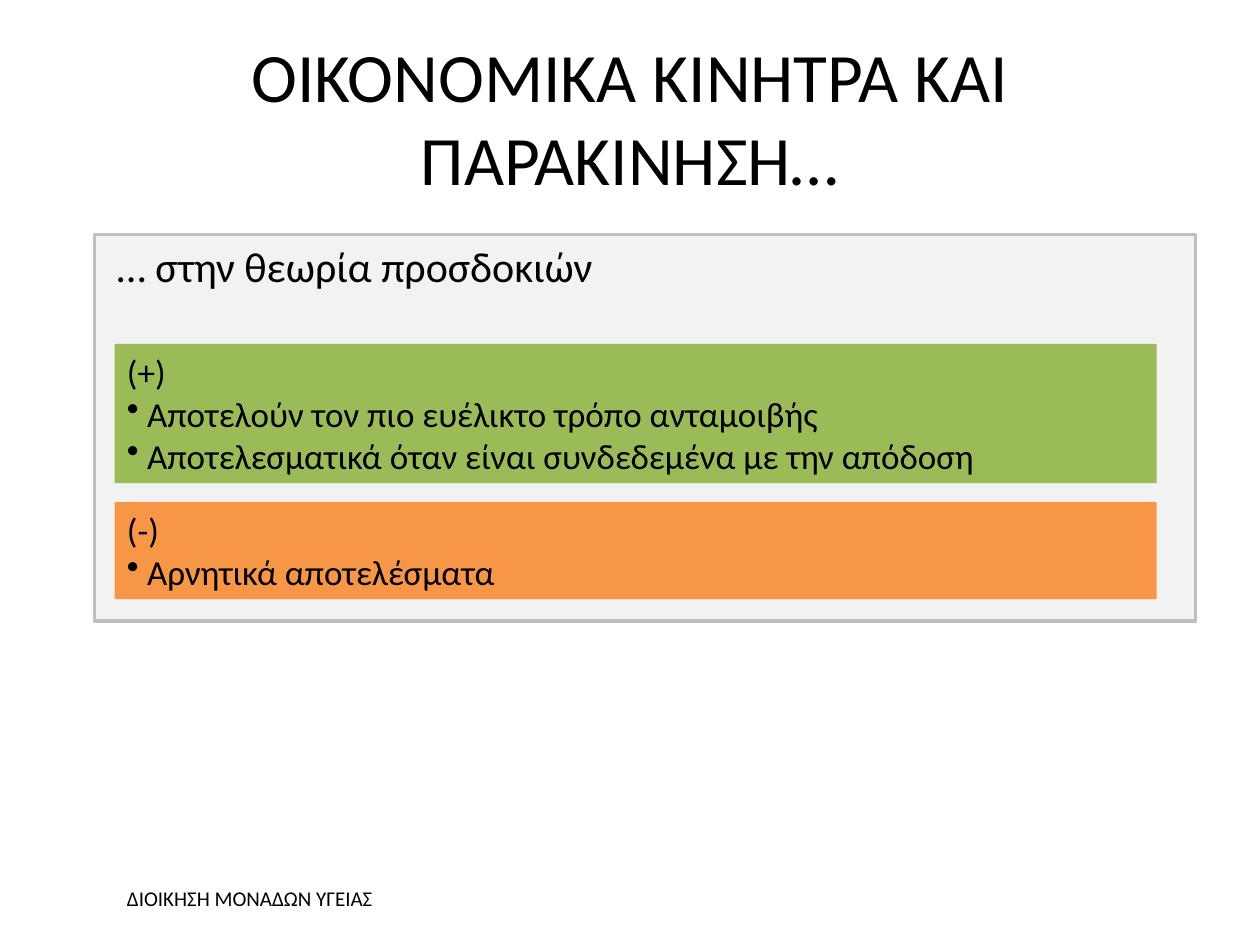
import pptx
import pptx.util
import pptx.dml.color
import pptx.enum.shapes
import pptx.enum.text
import pptx.oxml.ns
from dataclasses import dataclass
from lxml import etree

Inches = pptx.util.Inches
Pt = pptx.util.Pt
Align = pptx.enum.text.PP_ALIGN
Anchor = pptx.enum.text.MSO_ANCHOR


@dataclass(frozen=True)
class Theme:
    font: str = "Calibri"
    ink: str = "000000"
    panel: str = "F2F2F2"
    edge: str = "BFBFBF"
    plus: str = "9BBB59"
    minus: str = "F79646"
    title: float = 39.6
    lead: float = 24
    body: float = 20
    foot: float = 12


THEME = Theme()


def color(code):
    return pptx.dml.color.RGBColor.from_string(code)


def bullet(para):
    """Hang the paragraph behind a round bullet."""
    props = para._p.get_or_add_pPr()
    indent = Inches(0.16)
    props.set("marL", str(indent))
    props.set("indent", str(-indent))
    mark = etree.SubElement(props, pptx.oxml.ns.qn("a:buChar"))
    mark.set("char", "•")


def write(shape, lines, size, align=Align.LEFT, anchor=Anchor.TOP):
    """Fill the shape with lines; all after the first are bulleted."""
    frame = shape.text_frame
    frame.word_wrap = True
    frame.vertical_anchor = anchor
    for i, line in enumerate(lines):
        para = frame.add_paragraph() if i else frame.paragraphs[0]
        para.text = line
        para.alignment = align
        if i:
            bullet(para)
        para.font.name = THEME.font
        para.font.size = Pt(size)
        para.font.color.rgb = color(THEME.ink)


def label(slide, box, text, size, **layout):
    shape = slide.shapes.add_textbox(*box)
    write(shape, [text], size, **layout)


def block(slide, box, fill):
    shape = slide.shapes.add_shape(
        pptx.enum.shapes.MSO_SHAPE.RECTANGLE, *box)
    shape.shadow.inherit = False
    shape.fill.solid()
    shape.fill.fore_color.rgb = color(fill)
    shape.line.fill.background()
    return shape


def panel(slide, box, lead, groups):
    """Draw a framed panel with a lead line and stacked colour blocks."""
    left, top, width, height = box
    frame = block(slide, box, THEME.panel)
    frame.line.color.rgb = color(THEME.edge)
    frame.line.width = Pt(2)

    label(slide, (left + Inches(0.08), top, Inches(4.09), Inches(0.5)),
          lead, THEME.lead)

    y = top + Inches(0.87)
    for fill, lines in groups:
        tall = Inches(0.1) + len(lines) * Inches(0.335)
        card = block(slide, (left + Inches(0.16), y,
                             width - Inches(0.47), tall), fill)
        write(card, lines, THEME.body)
        y += tall + Inches(0.15)


def main():
    deck = pptx.Presentation()
    deck.slide_width, deck.slide_height = Inches(10), Inches(7.5)
    slide = deck.slides.add_slide(deck.slide_layouts[6])

    label(slide, (Inches(0.5), Inches(0.3), Inches(9), Inches(1.25)),
          "ΟΙΚΟΝΟΜΙΚΑ ΚΙΝΗΤΡΑ ΚΑΙ ΠΑΡΑΚΙΝΗΣΗ…", THEME.title,
          align=Align.CENTER, anchor=Anchor.MIDDLE)
    panel(slide, (Inches(0.75), Inches(1.86), Inches(8.74), Inches(3.07)),
          "… στην θεωρία προσδοκιών", [
              (THEME.plus, [
                  "(+)",
                  "Αποτελούν τον πιο ευέλικτο τρόπο ανταμοιβής",
                  "Αποτελεσματικά όταν είναι συνδεδεμένα με την απόδοση"]),
              (THEME.minus, ["(-)", "Αρνητικά αποτελέσματα"])])
    label(slide, (Inches(0.91), Inches(6.98), Inches(7.8), Inches(0.3)),
          "ΔΙΟΙΚΗΣΗ ΜΟΝΑΔΩΝ ΥΓΕΙΑΣ", THEME.foot)

    deck.save("out.pptx")


if __name__ == "__main__":
    main()
